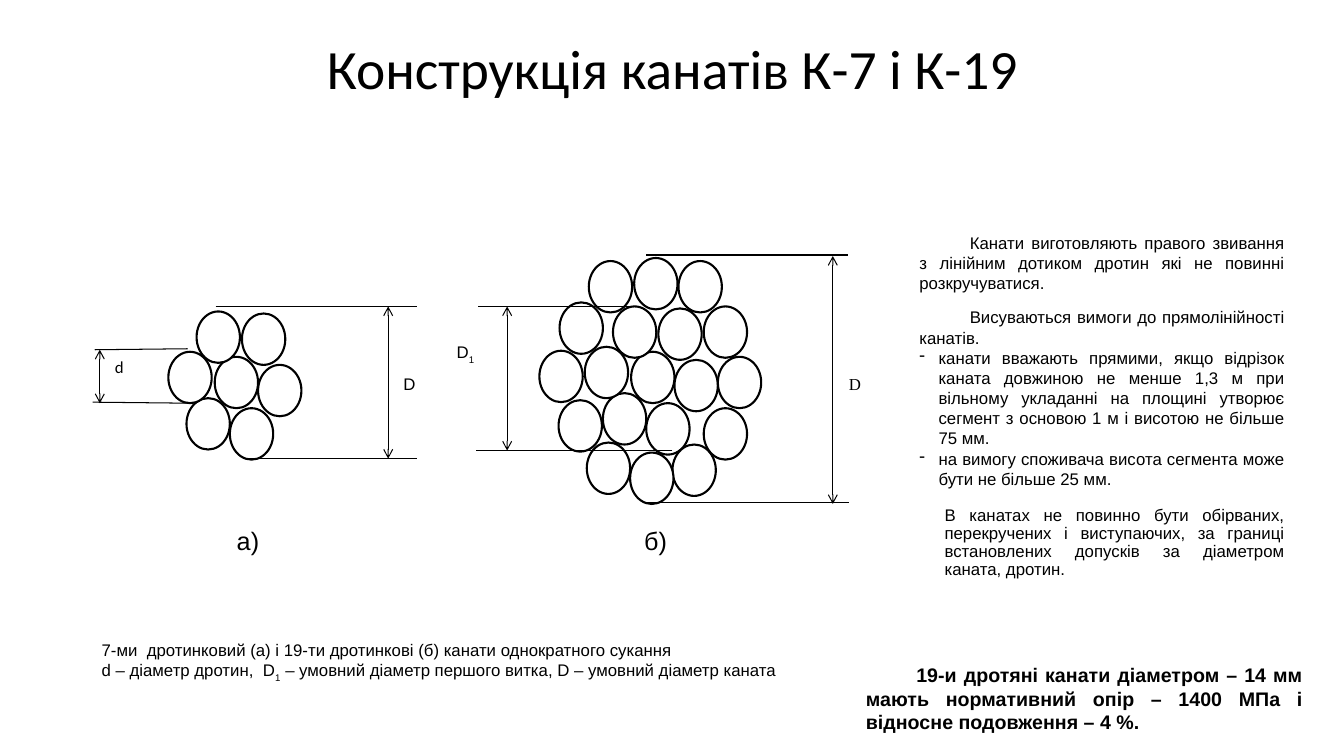
from lxml.etree import SubElement
from pptx import Presentation
from pptx.dml.color import RGBColor
from pptx.enum.shapes import MSO_CONNECTOR as Link, MSO_SHAPE as Shape
from pptx.enum.text import MSO_ANCHOR as Anchor, MSO_AUTO_SIZE as AutoSize, PP_ALIGN as Align
from pptx.oxml.ns import qn
from pptx.util import Pt

EMU_PER_PX = 9144
COLORS = {"ink": "000000", "paper": "FFFFFF"}
WIRE_WIDTH, WIRE_HEIGHT = 43, 51
CORE_WIRES = [(626, 349), (669, 357), (641, 400), (598, 390),
              (580, 344), (608, 304), (653, 306)]
OUTER_WIRES = [(667, 441), (673, 259), (629, 256), (555, 300), (584, 259), (698, 304),
               (712, 354), (698, 405), (625, 449), (554, 397), (535, 348), (582, 439)]
K7_SHIFT = (-413, 5)

EXTENSION_LINES = [
    (631, 304, 474, 304), (667, 447, 472, 447),
    (641, 253, 841, 253), (638, 499, 842, 499),
    (214, 304, 414, 304), (242, 455, 414, 455),
    (94, 347, 186, 346), (92, 399, 188, 400),
]
DIMENSION_ARROWS = [
    (503, 304, 503, 447), (826, 254, 826, 500),
    (385, 304, 385, 455), (99, 347, 99, 400),
]
DIMENSION_LABELS = [
    ("D", 400, 371, "Arial"), ("D|1|", 453, 339, "Arial"),
    ("D", 842, 371, "Times New Roman"), ("d", 114, 354, "Calibri"),
]

REQUIREMENTS = [
    ("Канати виготовляють правого звивання з лінійним дотиком дротин які не повинні "
     "розкручуватися.", {"first": 50}),
    ("Висуваються вимоги до прямолінійності канатів.", {"first": 50, "before": 10}),
    ("канати вважають прямими, якщо відрізок каната довжиною не менше 1,3 м при вільному "
     "укладанні на площині утворює сегмент з основою 1 м і висотою не більше 75 мм.",
     {"left": 19, "first": -19, "bullet": "-"}),
    ("на вимогу споживача висота сегмента може бути не більше 25 мм.",
     {"left": 19, "first": -19, "bullet": "-"}),
    ("В канатах не повинно бути обірваних, перекручених і виступаючих, за границі "
     "встановлених допусків за діаметром каната, дротин.",
     {"left": 25, "before": 13, "spacing": 0.9}),
]
CAPTION = [
    "7-ми  дротинковий (а) і 19-ти дротинкові (б) канати однократного сукання",
    "d – діаметр дротин,  D|1| – умовний діаметр першого витка, D – умовний діаметр каната",
]
STRENGTH = ("19-и дротяні канати діаметром – 14 мм мають нормативний опір – 1400 МПа "
            "і відносне подовження – 4 %.")


def px(length):
    return length * EMU_PER_PX


def color(name):
    return RGBColor.from_string(COLORS[name])


def write(paragraph, text, size=12, font="Arial", bold=False, align=Align.LEFT,
          left=0, first=0, before=0, spacing=None, bullet=None):
    paragraph.alignment = align
    paragraph.space_before = Pt(before)
    if spacing:
        paragraph.line_spacing = spacing
    properties = paragraph._p.get_or_add_pPr()
    properties.set("marL", str(px(left)))
    properties.set("indent", str(px(first)))
    if bullet:
        SubElement(properties, qn("a:buChar")).set("char", bullet)
    for index, part in enumerate(text.split("|")):
        if not part:
            continue
        run = paragraph.add_run()
        run.text = part
        run.font.size = Pt(size)
        run.font.name = font
        run.font.bold = bold
        run.font.color.rgb = color("ink")
        if index % 2:
            run._r.get_or_add_rPr().set("baseline", "-30000")


def add_text(slide, box, entries, inset=True, wrap=True, **common):
    frame = slide.shapes.add_textbox(*map(px, box)).text_frame
    frame.word_wrap = wrap
    if not inset:
        frame.margin_left = frame.margin_right = 0
        frame.margin_top = frame.margin_bottom = 0
    for index, (text, own) in enumerate(entries):
        paragraph = frame.add_paragraph() if index else frame.paragraphs[0]
        write(paragraph, text, **common, **own)


def add_title(slide, text):
    title = slide.shapes.title
    title.left, title.top, title.width, title.height = map(px, (92, 40, 1150, 61))
    frame = title.text_frame
    frame.auto_size = AutoSize.NONE
    frame.vertical_anchor = Anchor.MIDDLE
    write(frame.paragraphs[0], text, size=39.6, font="Calibri",
          align=Align.CENTER, spacing=0.9)


def add_strand(slide, wires, shift=(0, 0)):
    for x, y in wires:
        wire = slide.shapes.add_shape(Shape.OVAL, px(x + shift[0]), px(y + shift[1]),
                                      px(WIRE_WIDTH), px(WIRE_HEIGHT))
        wire.shadow.inherit = False
        wire.fill.solid()
        wire.fill.fore_color.rgb = color("paper")
        wire.line.color.rgb = color("ink")
        wire.line.width = Pt(1.5)


def add_line(slide, ends, arrows=False):
    line = slide.shapes.add_connector(Link.STRAIGHT, *map(px, ends))
    line.line.color.rgb = color("ink")
    line.line.width = Pt(0.75)
    if arrows:
        for end in ("a:headEnd", "a:tailEnd"):
            SubElement(line.line._get_or_add_ln(), qn(end)).set("type", "arrow")
    SubElement(line._element.spPr, qn("a:effectLst"))


def main():
    deck = Presentation()
    deck.slide_width, deck.slide_height = px(1333), px(750)
    slide = deck.slides.add_slide(deck.slide_layouts[5])
    add_title(slide, "Конструкція канатів К-7 і К-19")

    add_strand(slide, CORE_WIRES + OUTER_WIRES)
    add_strand(slide, CORE_WIRES, K7_SHIFT)
    for ends in EXTENSION_LINES:
        add_line(slide, ends)
    for ends in DIMENSION_ARROWS:
        add_line(slide, ends, arrows=True)
    for label, x, y, font in DIMENSION_LABELS:
        add_text(slide, (x, y, 37, 34), [(label, {})], inset=False, font=font)

    for letter, x in (("а)", 225), ("б)", 629)):
        add_text(slide, (x, 516, 50, 40), [(letter, {})], wrap=False, size=18)
    add_text(slide, (91, 630, 697, 50), [(line, {}) for line in CAPTION], wrap=False)
    add_text(slide, (902, 226, 382, 360), REQUIREMENTS, align=Align.JUSTIFY)
    add_text(slide, (849, 653, 453, 81), [(STRENGTH, {"first": 50})],
             size=14, bold=True, align=Align.JUSTIFY)
    deck.save("out.pptx")


if __name__ == "__main__":
    main()
